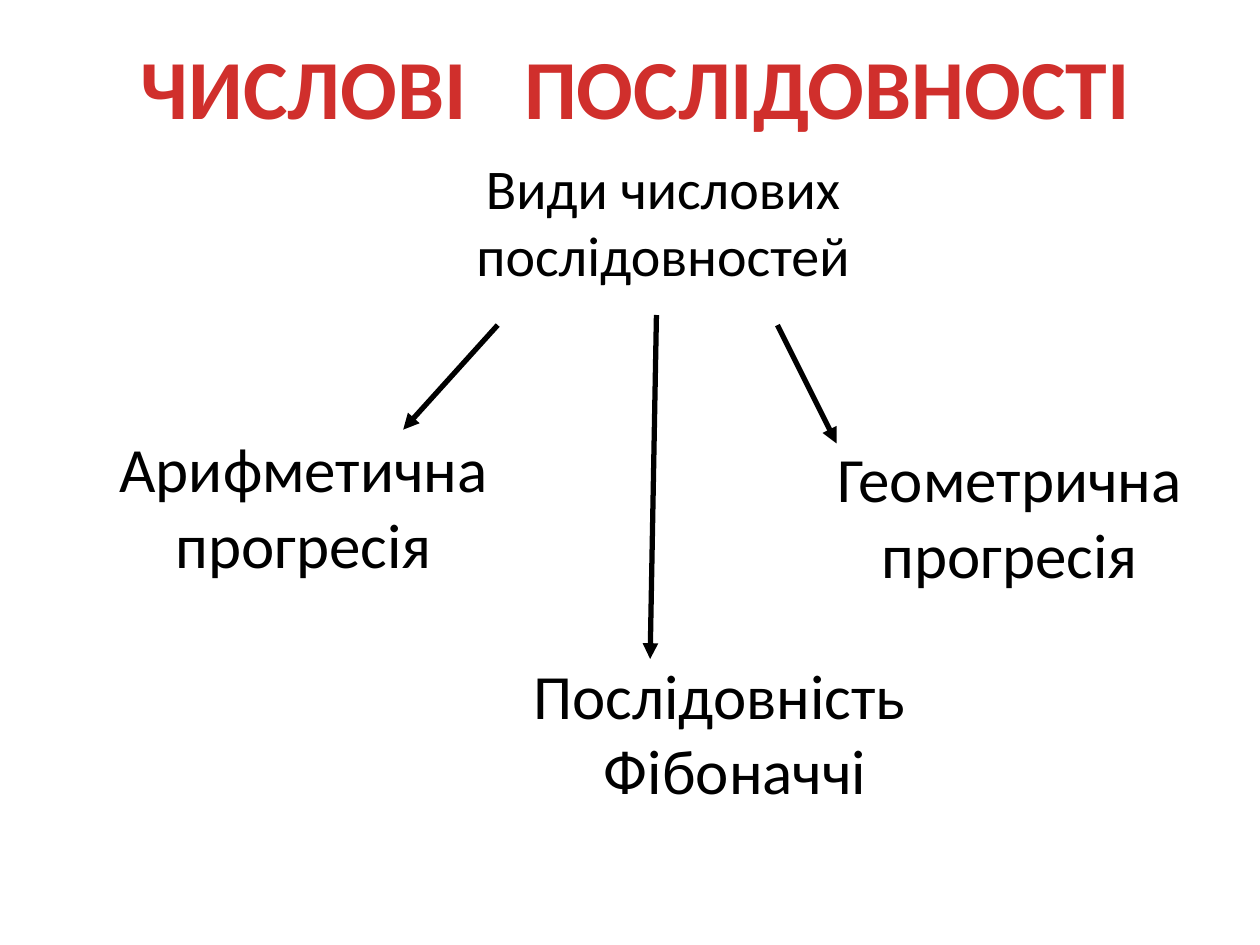
import copy

import pptx
import pptx.dml.color
import pptx.enum.shapes
import pptx.enum.text
import pptx.oxml.ns
import pptx.util
from lxml import etree

Inches = pptx.util.Inches
Pt = pptx.util.Pt
qn = pptx.oxml.ns.qn


def rgb(value):
    return pptx.dml.color.RGBColor.from_string(value)


def add_label(left, top, width, height, lines, size):
    """Add a centred text box with one paragraph per line."""
    label = slide.shapes.add_textbox(
        Inches(left), Inches(top), Inches(width), Inches(height))
    label.text_frame.word_wrap = True
    label.text_frame.text = "\n".join(lines)
    for paragraph in label.text_frame.paragraphs:
        paragraph.alignment = pptx.enum.text.PP_ALIGN.CENTER
        for run in paragraph.runs:
            run.font.name = "Calibri"
            run.font.size = Pt(size)
            run.font.color.rgb = rgb("000000")
    return label


presentation = pptx.Presentation()
presentation.slide_width = Inches(10)
presentation.slide_height = Inches(7.5)
slide = presentation.slides.add_slide(presentation.slide_layouts[6])

# Heading of the scheme and its three branches
add_label(3.65, 1.17, 3.23, 1.29, ["Види числових", "послідовностей"], 32)
add_label(0.81, 3.36, 3.2, 1.43, ["Арифметична", "прогресія"], 36)
add_label(6.53, 3.44, 2.97, 1.43, ["Геометрична", "прогресія"], 36)
fibonacci = add_label(4.07, 5.16, 3.28, 1.43, ["Послідовність", "Фібоначчі"], 36)

# The second Fibonacci line sits slightly right of centre
fibonacci_indent = fibonacci.text_frame.paragraphs[1]._p.get_or_add_pPr()
fibonacci_indent.set("marL", str(Inches(0.25)))

# Arrows from the heading to the branches
for x1, y1, x2, y2 in [
    (3.95, 2.58, 3.2, 3.41),
    (6.17, 2.58, 6.64, 3.52),
    (5.21, 2.5, 5.16, 5.23),
]:
    arrow = slide.shapes.add_connector(
        pptx.enum.shapes.MSO_CONNECTOR.STRAIGHT,
        Inches(x1), Inches(y1), Inches(x2), Inches(y2))
    arrow.line.color.rgb = rgb("000000")
    arrow.line.width = Pt(3)
    etree.SubElement(arrow.line._get_or_add_ln(), qn("a:tailEnd"), type="triangle")
    etree.SubElement(arrow._element.spPr, qn("a:effectLst"))

# Title, with the gap between its words widened by character spacing
title = add_label(0.98, 0.23, 8.13, 0.91, ["ЧИСЛОВІ"], 48)
title_line = title.text_frame.paragraphs[0]
for part in (" ", "ПОСЛІДОВНОСТІ"):
    title_line.add_run().text = part
title_line.runs[1]._r.get_or_add_rPr().set("spc", "2170")

# Red gradient, top to bottom
for run in title_line.runs:
    run.font.name = "Calibri"
    run.font.size = Pt(48)
    run.font.bold = True
    fill = run.font.fill
    fill.gradient()
    fill.gradient_angle = 270
    stop_list = run._r.rPr.find(".//" + qn("a:gsLst"))
    stop_list.append(copy.deepcopy(stop_list[0]))
    for stop, (position, color) in zip(
            fill.gradient_stops, [(0, "FC7C7A"), (0.75, "D02F2C"), (1, "C70500")]):
        stop.position = position
        stop.color.rgb = rgb(color)

presentation.save("out.pptx")
